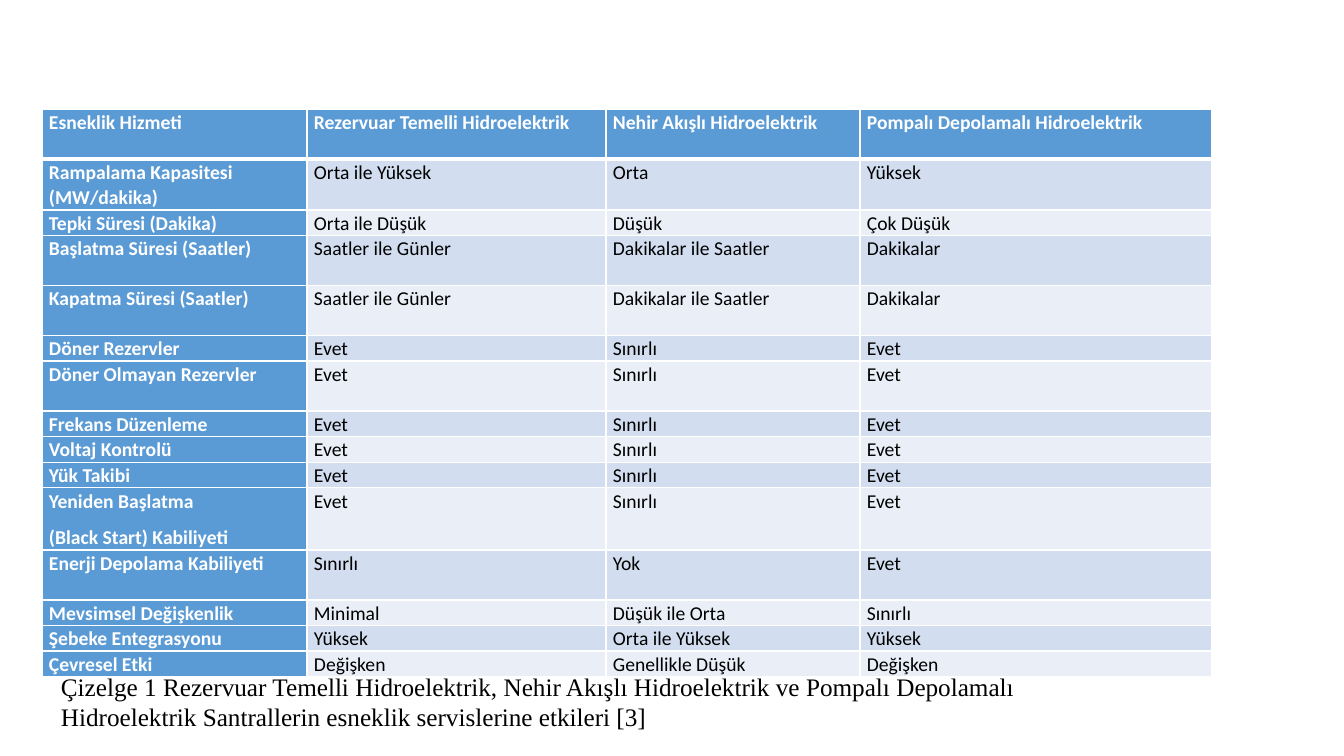
from lxml.etree import SubElement
from pptx import Presentation
from pptx.dml.color import RGBColor
from pptx.enum.text import MSO_AUTO_SIZE, PP_ALIGN
from pptx.oxml.ns import qn
from pptx.util import Emu, Pt


def px(length):
    """Turn pixels, 100.8 to the inch, into EMU."""
    return Emu(round(length * 914400 / 100.8))


def add_border(cell, side, points):
    line = SubElement(cell._tc.get_or_add_tcPr(), qn(f"a:ln{side}"), w=str(Pt(points)))
    fill = SubElement(line, qn("a:solidFill"))
    SubElement(fill, qn("a:srgbClr"), val=WHITE)


WHITE, BLACK = "FFFFFF", "000000"
HEADING_BLUE = "5B9BD5"
BANDS = ["EAEFF7", "D2DEEF"]

COLUMN_WIDTHS = [265, 299, 254, 352]
LOW, TALL, TWO_PARAGRAPHS = 24, 50, 60
ROWS = [
    (TALL, "Esneklik Hizmeti", "Rezervuar Temelli Hidroelektrik",
     "Nehir Akışlı Hidroelektrik", "Pompalı Depolamalı Hidroelektrik"),
    (TALL, "Rampalama Kapasitesi (MW/dakika)", "Orta ile Yüksek", "Orta", "Yüksek"),
    (LOW, "Tepki Süresi (Dakika)", "Orta ile Düşük", "Düşük", "Çok Düşük"),
    (TALL, "Başlatma Süresi (Saatler)", "Saatler ile Günler", "Dakikalar ile Saatler", "Dakikalar"),
    (TALL, "Kapatma Süresi (Saatler)", "Saatler ile Günler", "Dakikalar ile Saatler", "Dakikalar"),
    (LOW, "Döner Rezervler", "Evet", "Sınırlı", "Evet"),
    (TALL, "Döner Olmayan Rezervler", "Evet", "Sınırlı", "Evet"),
    (LOW, "Frekans Düzenleme", "Evet", "Sınırlı", "Evet"),
    (LOW, "Voltaj Kontrolü", "Evet", "Sınırlı", "Evet"),
    (LOW, "Yük Takibi", "Evet", "Sınırlı", "Evet"),
    (TWO_PARAGRAPHS, "Yeniden Başlatma\n(Black Start) Kabiliyeti", "Evet", "Sınırlı", "Evet"),
    (TALL, "Enerji Depolama Kabiliyeti", "Sınırlı", "Yok", "Evet"),
    (LOW, "Mevsimsel Değişkenlik", "Minimal", "Düşük ile Orta", "Sınırlı"),
    (LOW, "Şebeke Entegrasyonu", "Yüksek", "Orta ile Yüksek", "Yüksek"),
    (LOW, "Çevresel Etki", "Değişken", "Genellikle Düşük", "Değişken"),
]

presentation = Presentation()
presentation.slide_width, presentation.slide_height = px(1344), px(756)
slide = presentation.slides.add_slide(presentation.slide_layouts[6])

# Flexibility table
table = slide.shapes.add_table(
    len(ROWS), len(COLUMN_WIDTHS), px(42), px(109),
    px(sum(COLUMN_WIDTHS)), px(sum(row[0] for row in ROWS))).table
table.first_col = True
for column, width in zip(table.columns, COLUMN_WIDTHS):
    column.width = px(width)

for row_index, (height, *texts) in enumerate(ROWS):
    table.rows[row_index].height = px(height)
    for column_index, text in enumerate(texts):
        cell = table.cell(row_index, column_index)
        is_heading = row_index == 0 or column_index == 0
        cell.margin_left = cell.margin_right = px(7)
        cell.margin_top = cell.margin_bottom = 0
        add_border(cell, "L", 1)
        add_border(cell, "R", 1)
        add_border(cell, "T", 3 if row_index == 1 else 1)
        add_border(cell, "B", 3 if row_index == 0 else 1)
        cell.fill.solid()
        cell.fill.fore_color.rgb = RGBColor.from_string(
            HEADING_BLUE if is_heading else BANDS[row_index % 2])
        cell.text_frame.text = text
        for paragraph in cell.text_frame.paragraphs:
            paragraph.line_spacing = 1.07
            paragraph.space_after = Pt(8)
            paragraph.font.name = "Calibri"
            paragraph.font.size = Pt(14)
            paragraph.font.bold = is_heading
            paragraph.font.color.rgb = RGBColor.from_string(WHITE if is_heading else BLACK)

# Caption
caption = slide.shapes.add_textbox(px(51), px(666), px(974), px(72)).text_frame
caption.word_wrap = True
caption.auto_size = MSO_AUTO_SIZE.SHAPE_TO_FIT_TEXT
paragraph = caption.paragraphs[0]
paragraph.text = (
    "Çizelge 1 Rezervuar Temelli Hidroelektrik, Nehir Akışlı Hidroelektrik ve Pompalı "
    "Depolamalı Hidroelektrik Santrallerin esneklik servislerine etkileri [3]")
paragraph.alignment = PP_ALIGN.JUSTIFY
paragraph.font.name = "Times New Roman"
paragraph.font.size = Pt(18)
paragraph.font.color.rgb = RGBColor.from_string(BLACK)

presentation.save("out.pptx")
